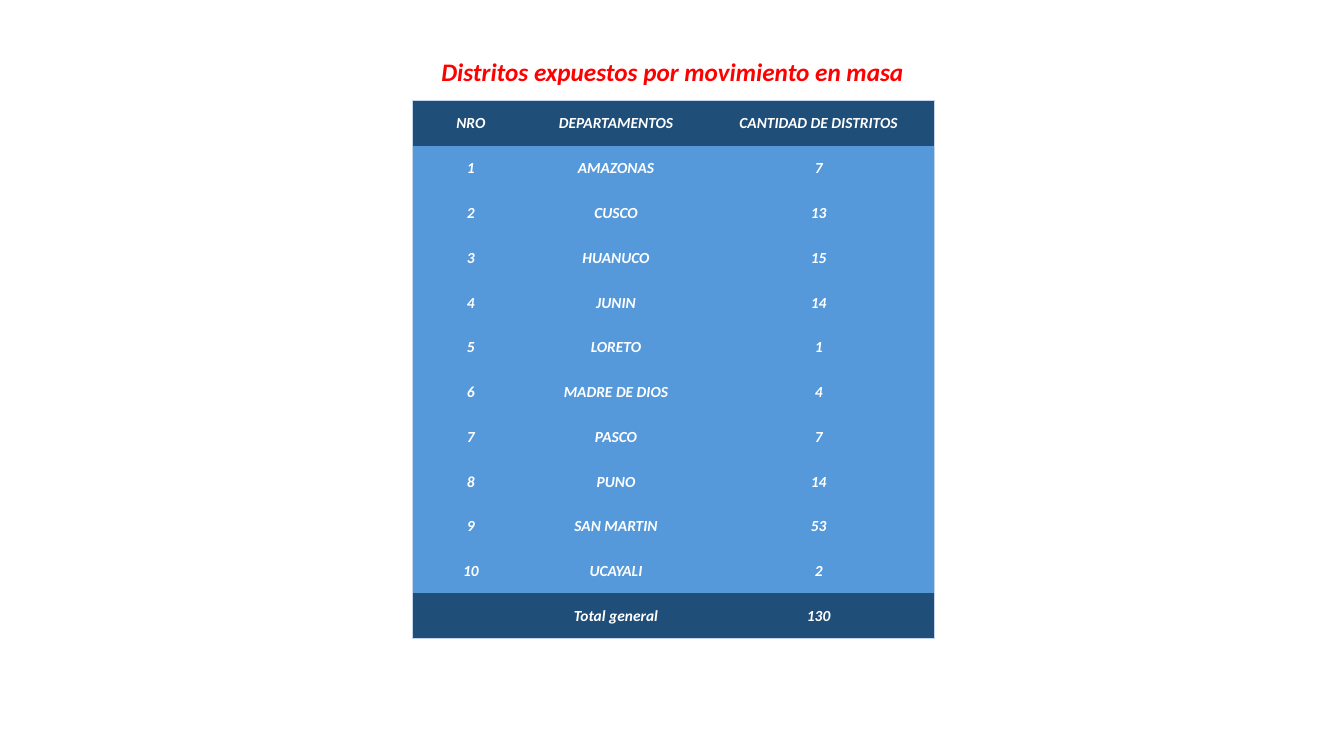
from lxml import etree
from pptx import Presentation
from pptx.dml.color import RGBColor
from pptx.enum import text
from pptx.oxml import ns
from pptx.util import Inches, Pt

COLOURS = {"title": "FF0000", "text": "FFFFFF", "dark": "1F4E79",
           "body": "5599DB", "border": "C4D5EB"}
COLUMN_WIDTHS = [1.16, 1.72, 2.3]
TABLE_HEIGHT = 5.33
DISTRICTS = [("AMAZONAS", 7), ("CUSCO", 13), ("HUANUCO", 15), ("JUNIN", 14),
             ("LORETO", 1), ("MADRE DE DIOS", 4), ("PASCO", 7), ("PUNO", 14),
             ("SAN MARTIN", 53), ("UCAYALI", 2)]


def write(frame, words, size, colour):
    para = frame.paragraphs[0]
    para.alignment = text.PP_ALIGN.CENTER
    span = para.add_run()
    span.text = words
    span.font.name = "Calibri"
    span.font.size = Pt(size)
    span.font.bold = span.font.italic = True
    span.font.color.rgb = RGBColor.from_string(COLOURS[colour])


def add_border(cell, side, visible):
    """Draw one side of a cell, or clear the line the table style puts there."""
    properties = cell._tc.get_or_add_tcPr()
    line = etree.SubElement(properties, ns.qn(f"a:ln{side}"), w=str(Pt(0.5)))
    if visible:
        fill = etree.SubElement(line, ns.qn("a:solidFill"))
        etree.SubElement(fill, ns.qn("a:srgbClr"), val=COLOURS["border"])
    else:
        etree.SubElement(line, ns.qn("a:noFill"))


deck = Presentation()
deck.slide_width, deck.slide_height = Inches(13.33), Inches(7.5)
page = deck.slides.add_slide(deck.slide_layouts[6])

title = page.shapes.add_textbox(Inches(4.25), Inches(0.51), Inches(4.84), Inches(0.4))
title.text_frame.word_wrap = False
title.text_frame.auto_size = text.MSO_AUTO_SIZE.SHAPE_TO_FIT_TEXT
write(title.text_frame, "Distritos expuestos por movimiento en masa", 18, "title")

rows = [("NRO", "DEPARTAMENTOS", "CANTIDAD DE DISTRITOS")]
rows += [(number, name, count) for number, (name, count) in enumerate(DISTRICTS, 1)]
rows.append(("", "Total general", sum(count for name, count in DISTRICTS)))
last_row, last_column = len(rows) - 1, len(COLUMN_WIDTHS) - 1

table = page.shapes.add_table(len(rows), len(COLUMN_WIDTHS), Inches(4.09), Inches(1),
                              Inches(sum(COLUMN_WIDTHS)), Inches(TABLE_HEIGHT)).table
table.horz_banding = False
for column, width in zip(table.columns, COLUMN_WIDTHS):
    column.width = Inches(width)

for r, values in enumerate(rows):
    table.rows[r].height = Inches(TABLE_HEIGHT / len(rows))
    for c, value in enumerate(values):
        cell = table.cell(r, c)
        cell.vertical_anchor = text.MSO_ANCHOR.MIDDLE
        cell.margin_left = cell.margin_right = cell.margin_top = Inches(0.01)
        cell.margin_bottom = 0
        add_border(cell, "L", c == 0)
        add_border(cell, "R", c == last_column)
        add_border(cell, "T", r == 0)
        add_border(cell, "B", r == last_row)
        cell.fill.solid()
        shade = "dark" if r in (0, last_row) else "body"
        cell.fill.fore_color.rgb = RGBColor.from_string(COLOURS[shade])
        if value != "":
            write(cell.text_frame, str(value), 11, "text")

deck.save("out.pptx")
